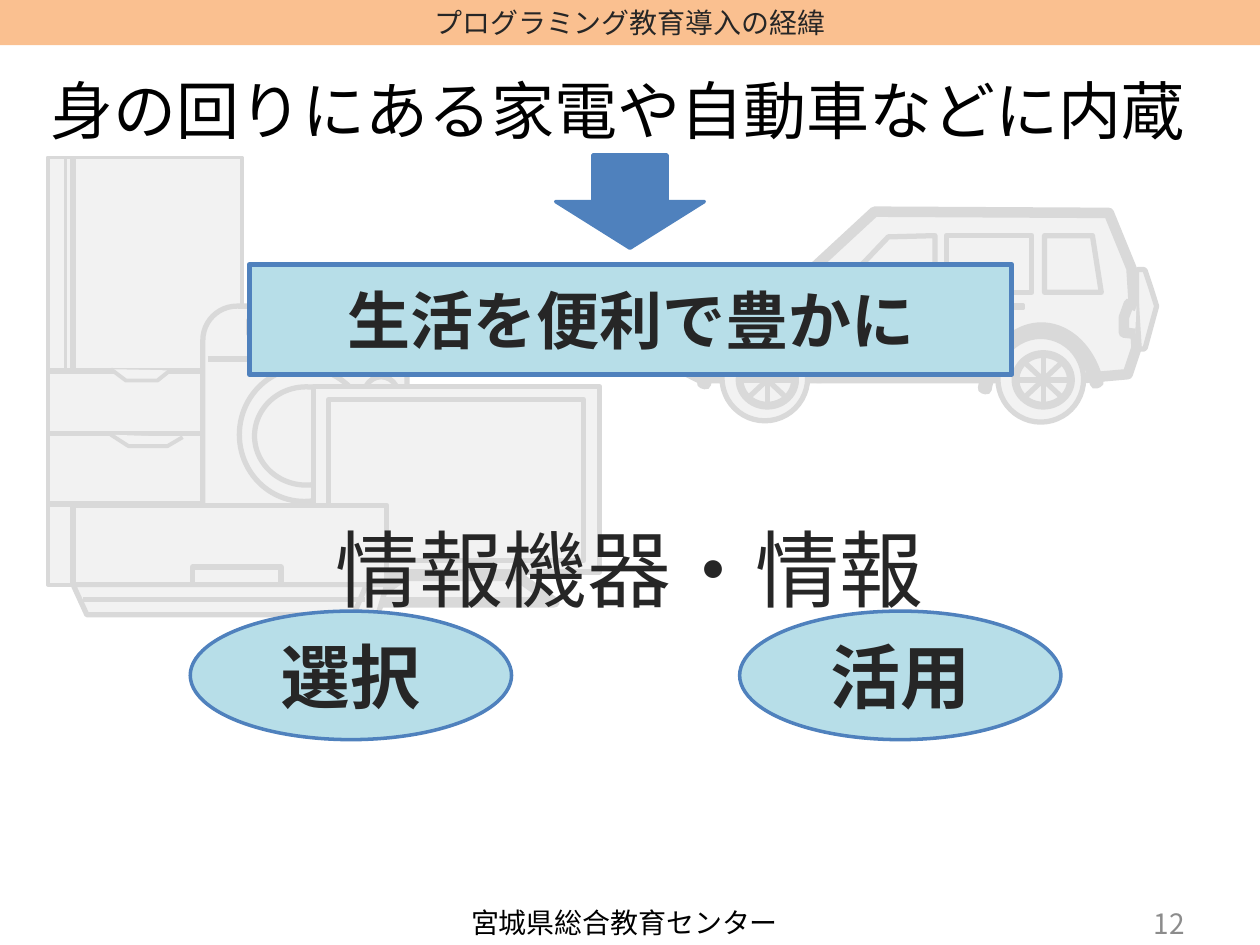
import dataclasses

import pptx
import pptx.dml.color
import pptx.enum.shapes
import pptx.enum.text
import pptx.oxml
import pptx.oxml.ns
import pptx.shapes.autoshape
import pptx.shapes.connector
import pptx.shapes.shapetree
import pptx.util

COLUMNS, ROWS = 100, 75
FONT = "Noto Sans CJK JP"
COLOURS = {
    "band": "FAC090", "panel": "B7DEE8", "accent": "4F81BD",
    "sketch_fill": "F2F2F2", "sketch_line": "D9D9D9",
    "text": "262626", "black": "000000", "number": "8C8C8C",
}
KIND = pptx.enum.shapes.MSO_SHAPE
ALIGN = pptx.enum.text.PP_ALIGN
ANCHOR = pptx.enum.text.MSO_ANCHOR
Shape = pptx.shapes.autoshape.Shape
Connector = pptx.shapes.connector.Connector
Shapes = pptx.shapes.shapetree.GroupShapes | pptx.shapes.shapetree.SlideShapes
Point = tuple[float, float]

deck = pptx.Presentation()
deck.slide_width = pptx.util.Inches(10)
deck.slide_height = pptx.util.Inches(7.5)
page = deck.slides.add_slide(deck.slide_layouts[5])


def spot(column: float, row: float) -> tuple[int, int]:
    """Turn grid columns and rows into slide lengths."""
    return (round(deck.slide_width * column / COLUMNS),
            round(deck.slide_height * row / ROWS))


@dataclasses.dataclass(frozen=True)
class Area:
    left: float
    top: float
    width: float
    height: float

    def lengths(self) -> tuple[int, int, int, int]:
        return spot(self.left, self.top) + spot(self.width, self.height)


@dataclasses.dataclass(frozen=True)
class Style:
    size: float
    colour: str = "text"
    bold: bool = False
    align: ALIGN = ALIGN.CENTER
    anchor: ANCHOR = ANCHOR.MIDDLE


def rgb(name: str) -> pptx.dml.color.RGBColor:
    return pptx.dml.color.RGBColor.from_string(COLOURS[name])


def paint(shape: Shape, fill: str, line: str, weight: float) -> Shape:
    shape.shadow.inherit = False
    shape.fill.solid()
    shape.fill.fore_color.rgb = rgb(fill)
    if weight:
        shape.line.color.rgb = rgb(line)
        shape.line.width = pptx.util.Pt(weight)
    else:
        shape.line.fill.background()
    return shape


def write(shape: Shape, words: str, style: Style) -> None:
    frame = shape.text_frame
    frame.word_wrap = True
    frame.auto_size = pptx.enum.text.MSO_AUTO_SIZE.NONE
    frame.vertical_anchor = style.anchor
    para = frame.paragraphs[0]
    para.text = words
    para.alignment = style.align
    font = para.font
    font.size = pptx.util.Pt(style.size)
    font.bold = style.bold
    font.color.rgb = rgb(style.colour)
    font.name = FONT
    defaults = para._p.pPr.find(pptx.oxml.ns.qn("a:defRPr"))
    east_asian = pptx.oxml.parse_xml(
        f'<a:ea {pptx.oxml.ns.nsdecls("a")} typeface="{FONT}"/>')
    defaults.append(east_asian)


def add_label(area: Area, words: str, style: Style) -> None:
    write(page.shapes.add_textbox(*area.lengths()), words, style)


def add_panel(kind: KIND, area: Area, fill: str, weight: float) -> Shape:
    return paint(page.shapes.add_shape(kind, *area.lengths()), fill, "accent", weight)


def sketch(shapes: Shapes, kind: KIND, area: Area, weight: float = 3) -> Shape:
    shape = shapes.add_shape(kind, *area.lengths())
    return paint(shape, "sketch_fill", "sketch_line", weight)


def sketch_outline(shapes: Shapes, points: list[Point], weight: float = 3,
                   close: bool = False) -> None:
    start, *rest = [spot(*point) for point in points]
    builder = shapes.build_freeform(*start)
    builder.add_line_segments(rest, close=close)
    paint(builder.convert_to_shape(), "sketch_fill", "sketch_line", weight)


def sketch_line(shapes: Shapes, start: Point, end: Point, weight: float = 3) -> Connector:
    straight = pptx.enum.shapes.MSO_CONNECTOR.STRAIGHT
    line = shapes.add_connector(straight, *spot(*start), *spot(*end))
    line.line.color.rgb = rgb("sketch_line")
    line.line.width = pptx.util.Pt(weight)
    line._element.spPr.append(pptx.oxml.parse_xml(
        f'<a:effectLst {pptx.oxml.ns.nsdecls("a")}/>'))
    return line


def sketch_arch(shapes: Shapes, area: Area) -> None:
    arch = sketch(shapes, KIND.BLOCK_ARC, area, 6)
    for index, value in enumerate((117.94, 202.62, 0.03)):
        arch.adjustments[index] = value


def sketch_wheel(shapes: Shapes, left: float, top: float) -> None:
    sketch(shapes, KIND.OVAL, Area(left, top, 6.8, 6.8))
    hub = Area(left + 1.4, 28.1, 4.4, 4.1)
    sketch(shapes, KIND.OVAL, hub, 4.5)
    x, y = hub.left + hub.width / 2, hub.top + hub.height / 2
    for dx, dy in ((0, 2.05), (2.2, 0), (1.55, 1.45), (-1.55, 1.45)):
        sketch_line(shapes, (x - dx, y - dy), (x + dx, y + dy))


def draw_car(shapes: Shapes) -> None:
    spare_tyre = [(90.2, 21.5), (90.3, 21.4), (90.8, 21.4), (90.9, 21.5), (91.35, 22.85),
                  (91.8, 24.3), (91.35, 25.95), (90.9, 27.6), (90.8, 27.7), (90.3, 27.7),
                  (90.2, 27.6)]
    body = [(53.7, 26), (55.2, 23.4), (64.1, 21.7), (69.4, 16.8), (88, 16.9), (89.8, 21.3),
            (90.2, 27.6), (89.6, 29.4), (89.5, 29.7), (86.1, 30), (55.5, 30)]
    sketch_outline(shapes, spare_tyre, close=True)
    sketch_outline(shapes, body, 6)
    sketch_outline(shapes, [(53.3, 26), (53.1, 26.5), (53.1, 28.8), (55.5, 30)], 6)
    sketch_arch(shapes, Area(77.9, 26, 9.5, 12.4))
    sketch_line(shapes, (64.5, 30), (78.2, 30), 6)
    sketch_arch(shapes, Area(55.6, 25.6, 9.9, 12.5))
    sketch_outline(shapes, [(90.1, 26.5), (89.2, 26.4), (89.2, 25.2), (89.6, 24.1),
                            (90.2, 24.3)], 6)
    sketch_outline(shapes, [(74.2, 18.7), (70.5, 18.8), (66.5, 23), (66.4, 23.2),
                            (74.2, 23.2)], close=True)
    sketch(shapes, KIND.RECTANGLE, Area(75.1, 18.7, 6.8, 4.5))
    sketch_outline(shapes, [(82.9, 18.7), (86.7, 18.7), (87.4, 23.2), (82.9, 23.2)],
                   close=True)
    sketch(shapes, KIND.RECTANGLE, Area(79.7, 24.2, 1.5, 0.3), 2)
    sketch_wheel(shapes, 57.3, 26.6)
    sketch_wheel(shapes, 79.2, 26.7)


def draw_appliances(shapes: Shapes) -> None:
    fridge = sketch(shapes, KIND.RECTANGLE, Area(3.8, 12.5, 15.4, 33.9), 2.25)
    for column, weight in ((5.8, 3), (5.2, 2.25)):
        sketch_line(shapes, (column, 12.5), (column, 29.4), weight)
    drawers = [sketch_line(shapes, (3.8, row), (19.2, row)) for row in (29.4, 34.4, 40)]
    drawers[0].begin_connect(fridge, 1)
    drawers[0].end_connect(fridge, 3)
    sketch_outline(shapes, [(8.8, 29.3), (10, 30.2), (12.5, 30.2), (13.5, 29.4)], 2.25)
    sketch_outline(shapes, [(8.8, 34.5), (10.2, 35.4), (13.3, 35.4), (14.5, 34.7)], 2.25)

    sketch(shapes, KIND.ROUNDED_RECTANGLE, Area(16.1, 24.3, 16.2, 21.9))
    for area in (Area(19, 29.2, 10.3, 10.6), Area(20.2, 30.7, 8.2, 7.8),
                 Area(28.9, 29.9, 2.7, 2.8)):
        sketch(shapes, KIND.OVAL, area)
    sketch(shapes, KIND.RECTANGLE, Area(19.7, 25.4, 8.9, 1.1), 2)
    sketch_line(shapes, (16.5, 28.5), (32.4, 28.5))

    sketch(shapes, KIND.RECTANGLE, Area(24.9, 30.7, 22.7, 14.7))
    sketch(shapes, KIND.RECTANGLE, Area(26.1, 31.7, 20.2, 12.8))
    stand = sketch(shapes, KIND.FLOWCHART_MANUAL_OPERATION, Area(29.1, 45.7, 14.9, 2.1), 6)
    stand.rotation = 180

    sketch_outline(shapes, [(5.8, 46.4), (30.7, 46.4), (30, 48.8), (6.9, 48.8)], close=True)
    sketch(shapes, KIND.RECTANGLE, Area(5.8, 40.1, 24.9, 6.3))
    sketch(shapes, KIND.RECTANGLE, Area(15.3, 45, 7, 1.4))
    sketch_line(shapes, (6.6, 47.6), (29, 47.6))
    sketch_line(shapes, (28.1, 48.7), (29, 46.6))


def main() -> None:
    title = page.shapes.title
    title.left, title.top, title.width, title.height = Area(3, 5.2, 94.1, 7.1).lengths()
    write(title, "身の回りにある家電や自動車などに内蔵",
          Style(36, "black", align=ALIGN.LEFT, anchor=ANCHOR.TOP))

    band = add_panel(KIND.RECTANGLE, Area(0, 0, COLUMNS, 3.6), "band", 0)
    write(band, "プログラミング教育導入の経緯", Style(16))
    add_label(Area(36.4, 71.4, 27.2, 3.7), "宮城県総合教育センター",
              Style(16, "black", align=ALIGN.LEFT, anchor=ANCHOR.TOP))

    draw_car(page.shapes.add_group_shape().shapes)
    draw_appliances(page.shapes.add_group_shape().shapes)

    benefit = add_panel(KIND.RECTANGLE, Area(19.8, 21, 60.5, 8.7), "panel", 3)
    write(benefit, "生活を便利で豊かに", Style(36, bold=True))
    add_panel(KIND.DOWN_ARROW, Area(44.1, 12.3, 11.8, 7.4), "accent", 2)
    add_label(Area(71.7, 71.3, 23.3, 4), "12", Style(16, "number", align=ALIGN.RIGHT))
    add_label(Area(13.9, 40.6, 72.1, 9.1), "情報機器・情報", Style(48, anchor=ANCHOR.TOP))
    for left, words in ((15.1, "選択"), (58.7, "活用")):
        skill = add_panel(KIND.OVAL, Area(left, 48.5, 25.5, 10.2), "panel", 2)
        write(skill, words, Style(40, bold=True))

    deck.save("out.pptx")


if __name__ == "__main__":
    main()
